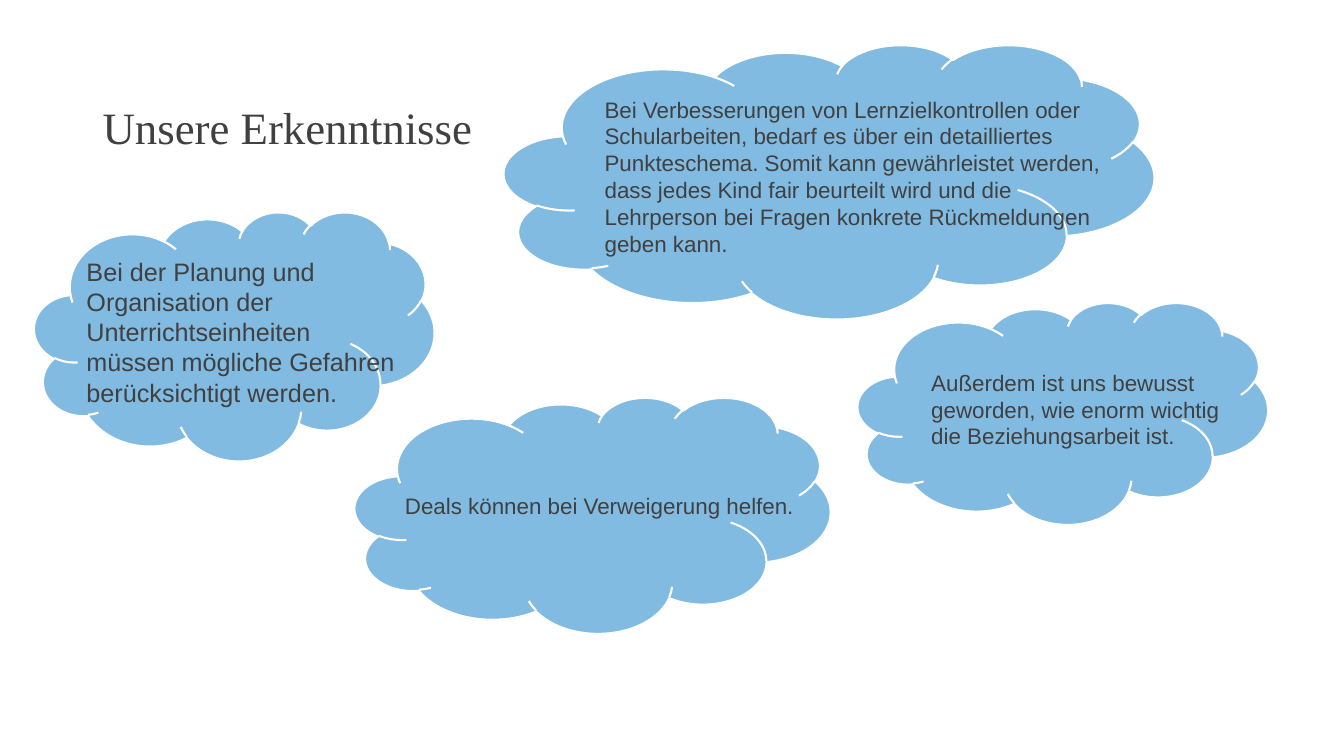
from pptx import Presentation
from pptx.dml.color import RGBColor
from pptx.enum.shapes import MSO_SHAPE
from pptx.enum.text import MSO_ANCHOR
from pptx.util import Pt

CLOUD = MSO_SHAPE.CLOUD
TOP, BOTTOM = MSO_ANCHOR.TOP, MSO_ANCHOR.BOTTOM
COLORS = {"cloud": "82BBE1", "edge": "FFFFFF", "text": "404040"}
SIZE = (960, 540)
TITLE = ("Unsere Erkenntnisse", (66.2, 28.8, 774, 85))
IDEAS = [
    {"cloud": (24.5, 151.2, 285.8, 177.8), "box": (54.7, 179.3, 235.4, 116.6), "size": 18,
     "text": "Bei der Planung und Organisation der Unterrichtseinheiten müssen "
             "mögliche Gefahren berücksichtigt werden."},
    {"cloud": (253.4, 283.7, 339.8, 168.5), "box": (282.2, 347.8, 293, 26.6), "size": 16,
     "text": "Deals können bei Verweigerung helfen."},
    {"cloud": (612.7, 216, 293, 158.4), "box": (658.1, 259.9, 244.1, 65.5), "size": 16,
     "text": "Außerdem ist uns bewusst geworden, wie enorm wichtig die "
             "Beziehungsarbeit ist."},
    {"cloud": (360, 31.7, 464.4, 195.8), "box": (424.8, 64.8, 368.6, 123.8), "size": 16,
     "text": "Bei Verbesserungen von Lernzielkontrollen oder Schularbeiten, bedarf es "
             "über ein detailliertes Punkteschema. Somit kann gewährleistet werden, dass "
             "jedes Kind fair beurteilt wird und die Lehrperson bei Fragen konkrete "
             "Rückmeldungen geben kann."},
]


def color(name):
    return RGBColor.from_string(COLORS[name])


def add_text(slide, text, box, size=16, font="Arial", anchor=TOP, spacing=1.0):
    frame = slide.shapes.add_textbox(*map(Pt, box)).text_frame
    frame.word_wrap = True
    frame.vertical_anchor = anchor
    par = frame.paragraphs[0]
    par.line_spacing = spacing
    run = par.add_run()
    run.text = text
    run.font.size = Pt(size)
    run.font.name = font
    run.font.color.rgb = color("text")


def add_cloud(slide, box):
    cloud = slide.shapes.add_shape(CLOUD, *map(Pt, box))
    cloud.shadow.inherit = False
    cloud.fill.solid()
    cloud.fill.fore_color.rgb = color("cloud")
    cloud.line.color.rgb = color("edge")
    cloud.line.width = Pt(1.5)


def main():
    """Build the slide with four findings in clouds."""
    deck = Presentation()
    deck.slide_width, deck.slide_height = map(Pt, SIZE)
    slide = deck.slides.add_slide(deck.slide_layouts[6])
    add_text(slide, *TITLE, size=32, font="Times New Roman", anchor=BOTTOM, spacing=0.9)
    for idea in IDEAS:
        add_cloud(slide, idea["cloud"])
        add_text(slide, idea["text"], idea["box"], size=idea["size"])
    deck.save("out.pptx")


if __name__ == "__main__":
    main()
